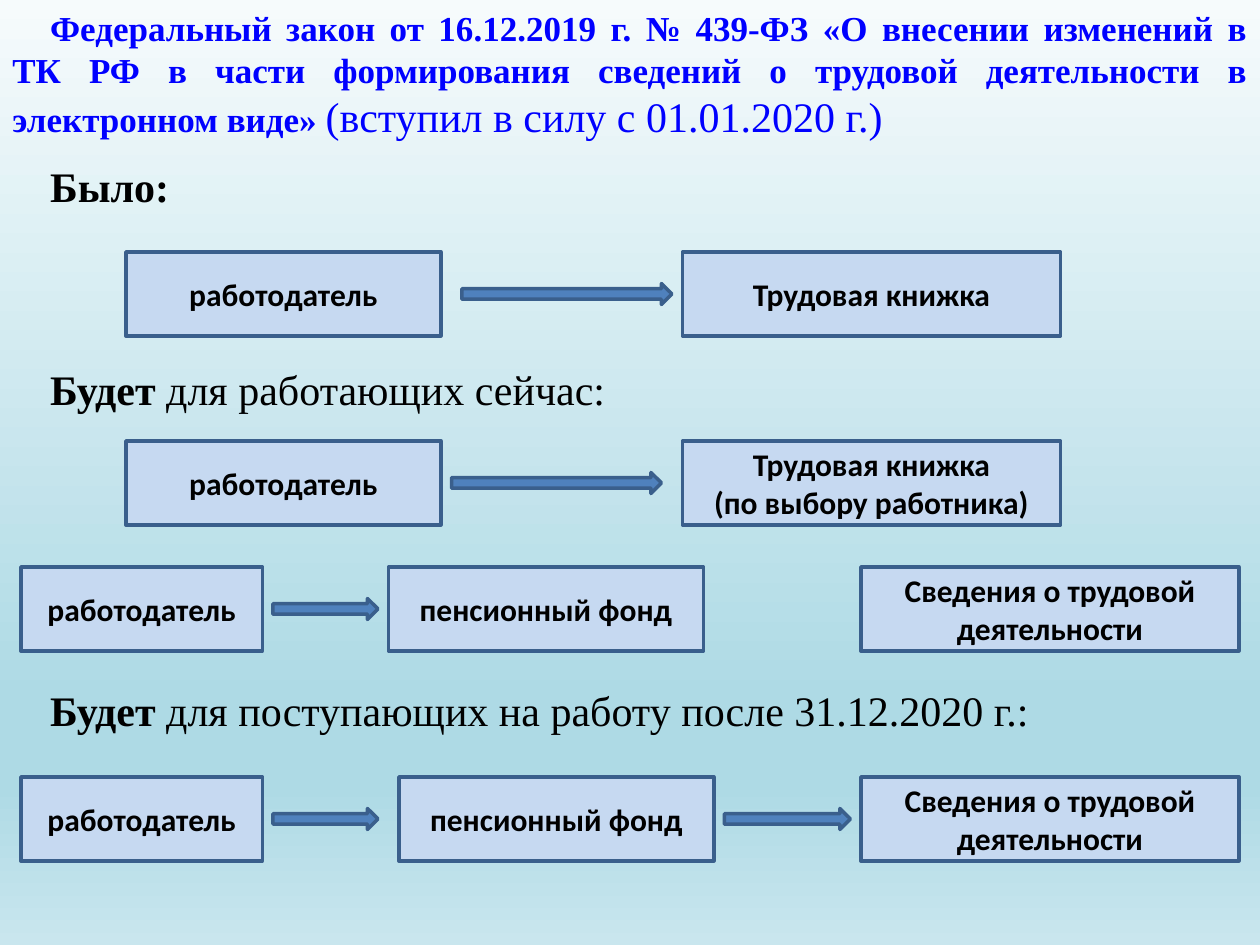
from lxml.etree import SubElement
from pptx import Presentation
from pptx.dml.color import RGBColor
from pptx.enum.shapes import MSO_SHAPE
from pptx.enum.text import MSO_ANCHOR, PP_ALIGN
from pptx.oxml.ns import qn
from pptx.util import Inches, Pt

THEME = {
    "serif": "Times New Roman", "sans": "Calibri",
    "law": "0000FF", "ink": "000000",
    "box": "C6D9F1", "arrow": "4F81BD", "outline": "3A5F8C",
    "law_size": 20, "heading_size": 24, "box_size": 18, "outline_width": 2,
    "backdrop": [(0, "F6FBFC"), (74, "AEDAE5"), (83, "AEDAE5"), (100, "C9E6EE")],
}

# Content: law title and headings as (space before in points, colour, [(text, size, bold)])
LAW, HEADING = THEME["law_size"], THEME["heading_size"]
STATEMENTS = [
    (0, THEME["law"], [
        ("Федеральный закон от 16.12.2019 г. № 439-ФЗ «О внесении изменений в ТК РФ "
         "в части формирования сведений о трудовой деятельности в электронном виде» ", LAW, True),
        ("(вступил в силу с 01.01.2020 г.)", HEADING, False)]),
    (11, THEME["ink"], [("Было:", HEADING, True)]),
    (87, THEME["ink"], [("Будет", HEADING, True),
                        (" для работающих сейчас:", HEADING, False)]),
    (155, THEME["ink"], [("Будет", HEADING, True),
                         (" для поступающих на работу после 31.12.2020 г.:", HEADING, False)]),
]

EMPLOYER, FUND = "работодатель", "пенсионный фонд"
BOOK, RECORDS = "Трудовая книжка", "Сведения о трудовой деятельности"

# Flows: top row, boxes as (column, columns wide, lines), arrows as (column, columns wide)
FLOWS = [
    (24, [(12, 30, [EMPLOYER]), (65, 36, [BOOK])], [(44, 20)]),
    (42, [(12, 30, [EMPLOYER]), (65, 36, [BOOK, "(по выбору работника)"])], [(43, 20)]),
    (54, [(2, 23, [EMPLOYER]), (37, 30, [FUND]), (82, 36, [RECORDS])], [(26, 10)]),
    (74, [(2, 23, [EMPLOYER]), (38, 30, [FUND]), (82, 36, [RECORDS])], [(26, 10), (69, 12)]),
]

# Grid of 120 columns by 90 rows
SLIDE_W, SLIDE_H = Inches(10), Inches(7.5)
COLUMN, ROW = SLIDE_W // 120, SLIDE_H // 90
BOX_ROWS, ARROW_ROWS = 8, 2


def add_text(paragraph, text, *, size, font, color, bold=False):
    run = paragraph.add_run()
    run.text = text
    run.font.size, run.font.name, run.font.bold = Pt(size), font, bold
    run.font.color.rgb = RGBColor.from_string(color)


def add_block(slide, kind, column, row, columns, rows, fill):
    block = slide.shapes.add_shape(kind, column * COLUMN, row * ROW, columns * COLUMN, rows * ROW)
    block.shadow.inherit = False
    block.fill.solid()
    block.fill.fore_color.rgb = RGBColor.from_string(fill)
    block.line.color.rgb = RGBColor.from_string(THEME["outline"])
    block.line.width = Pt(THEME["outline_width"])
    return block


def paint_backdrop(slide):
    fill = slide.background.fill
    fill.gradient()
    fill.gradient_angle = 270
    stops = slide.element.find(".//" + qn("a:gsLst"))
    for stop in list(stops):
        stops.remove(stop)
    for share, color in THEME["backdrop"]:
        stop = SubElement(stops, qn("a:gs"), pos=str(share * 1000))
        SubElement(stop, qn("a:srgbClr"), val=color)


def add_statements(slide):
    frame = slide.shapes.add_textbox(0, 0, SLIDE_W, Inches(5.89)).text_frame
    frame.word_wrap = True
    frame.vertical_anchor = MSO_ANCHOR.MIDDLE
    for index, (gap, color, parts) in enumerate(STATEMENTS):
        paragraph = frame.add_paragraph() if index else frame.paragraphs[0]
        paragraph.alignment = PP_ALIGN.JUSTIFY
        paragraph.space_before = Pt(gap)
        paragraph._p.get_or_add_pPr().set("indent", str(Inches(0.3)))
        for text, size, bold in parts:
            add_text(paragraph, text, size=size, font=THEME["serif"], color=color, bold=bold)


def add_flow(slide, row, boxes, arrows):
    for column, columns, lines in boxes:
        box = add_block(slide, MSO_SHAPE.RECTANGLE, column, row, columns, BOX_ROWS, THEME["box"])
        frame = box.text_frame
        frame.word_wrap = True
        frame.vertical_anchor = MSO_ANCHOR.MIDDLE
        for index, line in enumerate(lines):
            paragraph = frame.add_paragraph() if index else frame.paragraphs[0]
            paragraph.alignment = PP_ALIGN.CENTER
            add_text(paragraph, line, size=THEME["box_size"], font=THEME["sans"],
                     color=THEME["ink"], bold=True)
    arrow_row = row + (BOX_ROWS - ARROW_ROWS) // 2
    for column, columns in arrows:
        add_block(slide, MSO_SHAPE.RIGHT_ARROW, column, arrow_row, columns, ARROW_ROWS,
                  THEME["arrow"])


def main():
    deck = Presentation()
    deck.slide_width, deck.slide_height = SLIDE_W, SLIDE_H
    slide = deck.slides.add_slide(deck.slide_layouts[6])
    paint_backdrop(slide)
    add_statements(slide)
    for row, boxes, arrows in FLOWS:
        add_flow(slide, row, boxes, arrows)
    deck.save("out.pptx")


if __name__ == "__main__":
    main()
